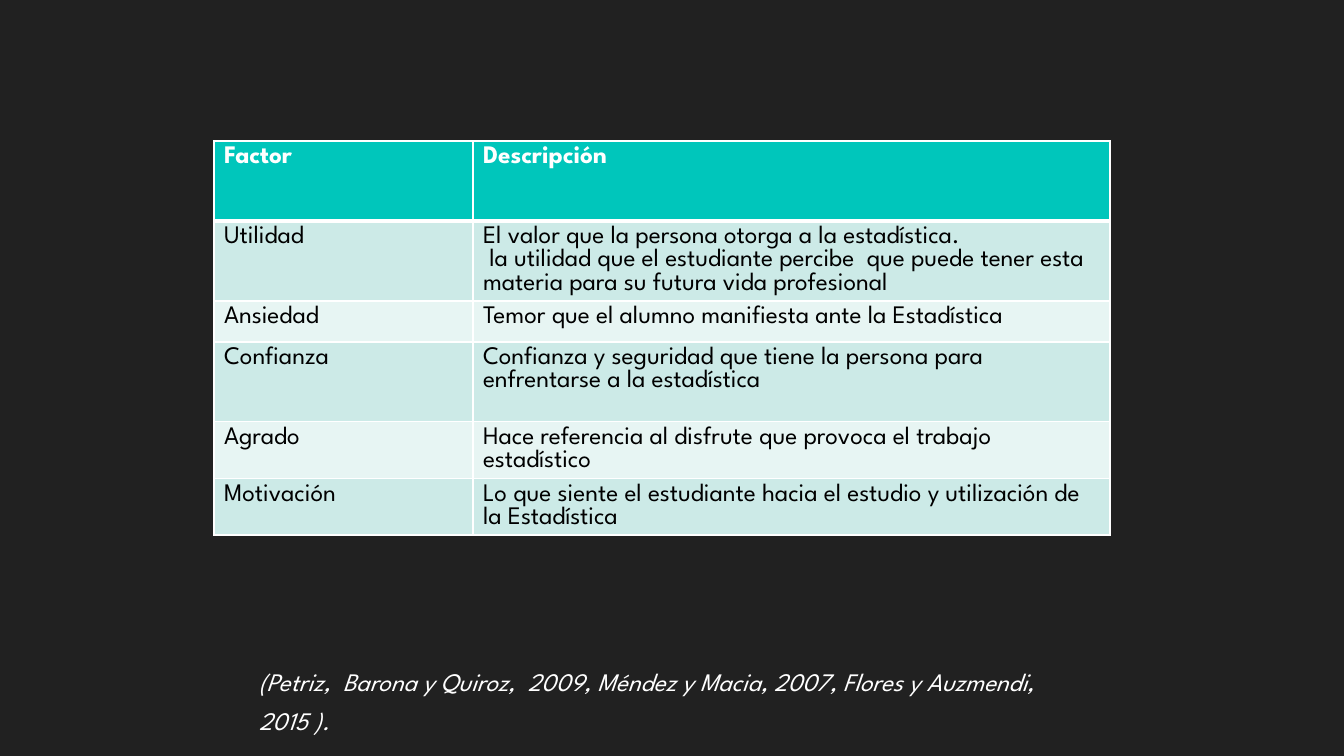
from dataclasses import dataclass

from lxml import etree
from pptx import Presentation
from pptx.dml.color import RGBColor
from pptx.enum.text import MSO_AUTO_SIZE
from pptx.oxml.ns import qn
from pptx.util import Emu, Pt

FIT_SHAPE = MSO_AUTO_SIZE.SHAPE_TO_FIT_TEXT
EMU_PER_PX = 914400 / 100.8
EMU_PER_POINT = 12700


@dataclass(frozen=True)
class Theme:
    font: str = "League Spartan"
    size: int = 18
    background: str = "212121"
    light: str = "FFFFFF"
    dark: str = "000000"
    header: str = "00C6BB"
    bands: tuple = ("CCEAE7", "E7F5F3")
    border: int = 1
    header_border: int = 3


THEME = Theme()
COLUMN_WIDTHS = (259, 637)
ROW_HEIGHTS = (80, 80, 41, 80, 56, 56)
FACTORS = (
    ("Factor", "Descripción"),
    ("Utilidad", "El valor que la persona otorga a la estadística.\n"
     " la utilidad que el estudiante percibe  que puede tener esta "
     "materia para su futura vida profesional"),
    ("Ansiedad", "Temor que el alumno manifiesta ante la Estadística"),
    ("Confianza", "Confianza y seguridad que tiene la persona para "
     "enfrentarse a la estadística"),
    ("Agrado", "Hace referencia al disfrute que provoca el trabajo estadístico"),
    ("Motivación", "Lo que siente el estudiante hacia el estudio y utilización "
     "de la Estadística"),
)
CITATION = ("(Petriz,  Barona y Quiroz,  2009, Méndez y Macia, 2007, "
            "Flores y Auzmendi, 2015 ).")


def px(length):
    return Emu(round(length * EMU_PER_PX))


def write_text(text_frame, text, color, bold=False, italic=False, spacing=None):
    text_frame.text = text
    for paragraph in text_frame.paragraphs:
        paragraph.line_spacing = spacing
        for run in paragraph.runs:
            run.font.name = THEME.font
            run.font.size = Pt(THEME.size)
            run.font.bold = bold
            run.font.italic = italic
            run.font.color.rgb = RGBColor.from_string(color)


def set_borders(cell, top, bottom):
    properties = cell._tc.get_or_add_tcPr()
    widths = {"lnL": THEME.border, "lnR": THEME.border, "lnT": top, "lnB": bottom}
    for position, (side, width) in enumerate(widths.items()):
        line = etree.Element(qn(f"a:{side}"), w=str(width * EMU_PER_POINT))
        fill = etree.SubElement(line, qn("a:solidFill"))
        etree.SubElement(fill, qn("a:srgbClr"), val=THEME.light)
        properties.insert(position, line)


def add_factor_table(slide, left, top):
    frame = slide.shapes.add_table(
        len(FACTORS), len(COLUMN_WIDTHS), px(left), px(top),
        px(sum(COLUMN_WIDTHS)), px(sum(ROW_HEIGHTS)))
    table = frame.table
    for column, width in zip(table.columns, COLUMN_WIDTHS):
        column.width = px(width)
    for index, (row, height, texts) in enumerate(zip(table.rows, ROW_HEIGHTS, FACTORS)):
        row.height = px(height)
        is_header = index == 0
        fill = THEME.header if is_header else THEME.bands[(index - 1) % 2]
        for cell, text in zip(row.cells, texts):
            cell.fill.solid()
            cell.fill.fore_color.rgb = RGBColor.from_string(fill)
            set_borders(cell,
                        top=THEME.header_border if index == 1 else THEME.border,
                        bottom=THEME.header_border if is_header else THEME.border)
            write_text(cell.text_frame, text, bold=is_header,
                       color=THEME.light if is_header else THEME.dark)


def add_citation(slide, left, top, width, height):
    shape = slide.shapes.add_textbox(px(left), px(top), px(width), px(height))
    shape.text_frame.word_wrap = True
    shape.text_frame.auto_size = FIT_SHAPE
    write_text(shape.text_frame, CITATION, THEME.light, italic=True, spacing=1.3)


def build_factor_slide(presentation):
    slide = presentation.slides.add_slide(presentation.slide_layouts[6])
    slide.background.fill.solid()
    slide.background.fill.fore_color.rgb = RGBColor.from_string(THEME.background)
    add_factor_table(slide, 214, 141)
    add_citation(slide, 249, 652, 861, 40)


def main():
    presentation = Presentation()
    presentation.slide_width = px(1344)
    presentation.slide_height = px(756)
    build_factor_slide(presentation)
    presentation.save("out.pptx")


if __name__ == "__main__":
    main()
